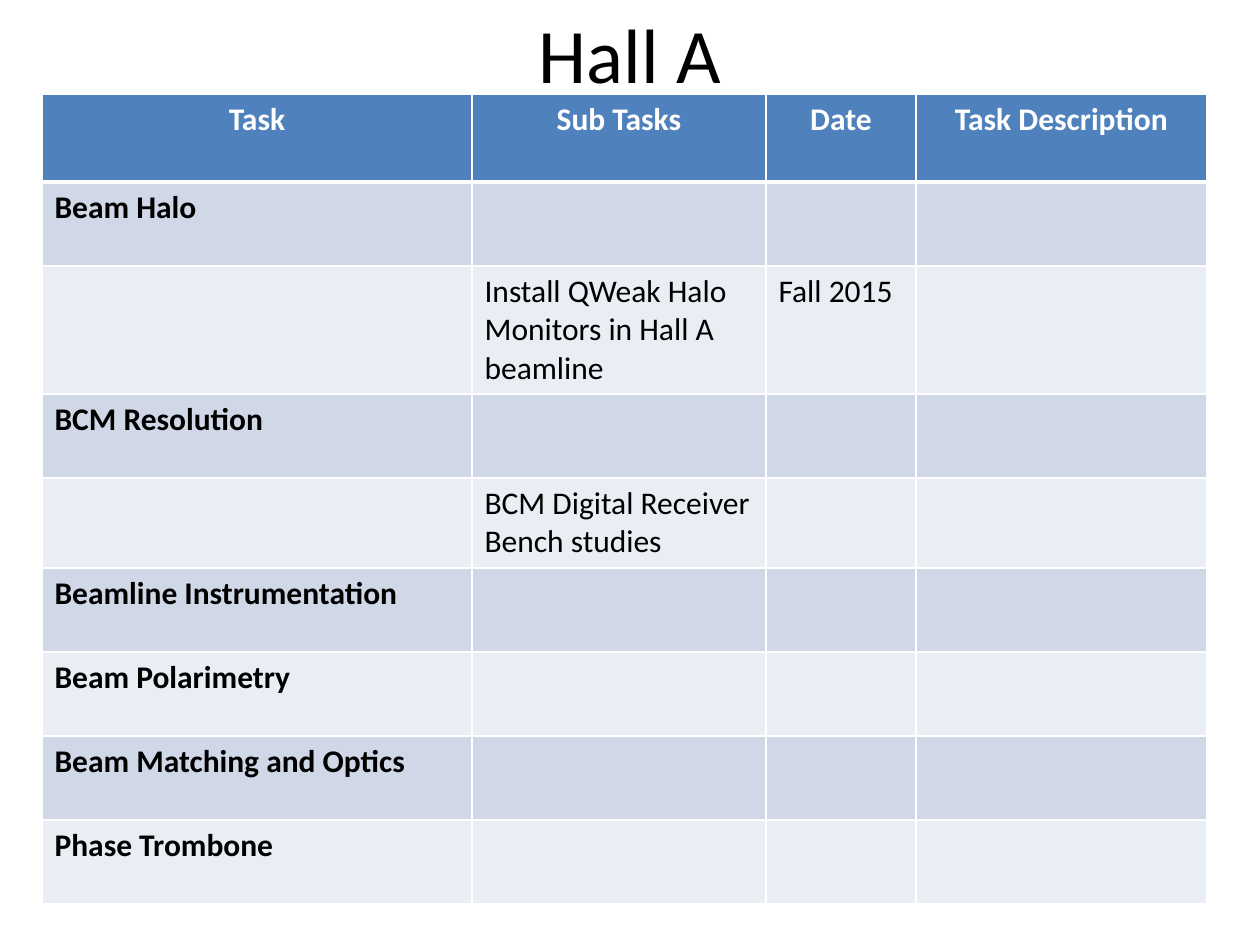
from lxml.etree import SubElement
from pptx import Presentation
from pptx.dml.color import RGBColor
from pptx.enum.text import MSO_ANCHOR, PP_ALIGN
from pptx.oxml.ns import qn
from pptx.util import Pt

TITLE = "Hall A"
HEADINGS = ["Task", "Sub Tasks", "Date", "Task Description"]
TASKS = [
    ("Beam Halo", "", ""),
    ("", "Install QWeak Halo Monitors in Hall A beamline", "Fall 2015"),
    ("BCM Resolution", "", ""),
    ("", "BCM Digital Receiver Bench studies", ""),
    ("Beamline Instrumentation", "", ""),
    ("Beam Polarimetry", "", ""),
    ("Beam Matching and Optics", "", ""),
    ("Phase Trombone", "", ""),
]
COLORS = {
    "heading": "4F81BD",
    "dark band": "D0D8E8",
    "light band": "E9EDF4",
    "white": "FFFFFF",
    "black": "000000",
}
FONT = "Calibri"
COLUMN_WIDTHS = [430, 294, 150, 291]
ROW_HEIGHTS = [88, 84, 128, 84, 90, 84, 84, 84, 84]


def px(length):
    return round(length * 914400 / 126)


def color(key):
    return RGBColor.from_string(COLORS[key])


def write(frame, text, size, ink, bold, align):
    frame.text = text
    paragraph = frame.paragraphs[0]
    paragraph.alignment = align
    font = paragraph.font
    for run in paragraph.runs:
        font = run.font
    font.name, font.size, font.bold = FONT, Pt(size), bold
    font.color.rgb = color(ink)


def add_borders(cell, row):
    widths = {"L": 1, "R": 1, "T": 3 if row == 1 else 1, "B": 3 if row == 0 else 1}
    properties = cell._tc.get_or_add_tcPr()
    for side, width in widths.items():
        line = SubElement(properties, qn(f"a:ln{side}"), w=str(Pt(width)))
        fill = SubElement(line, qn("a:solidFill"))
        SubElement(fill, qn("a:srgbClr"), val=COLORS["white"])


def add_title(slide):
    title = slide.shapes.title
    title.left, title.top, title.width, title.height = px(63), 0, px(1134), px(105)
    title.text_frame.vertical_anchor = MSO_ANCHOR.MIDDLE
    write(title.text_frame, TITLE, 44, "black", False, PP_ALIGN.CENTER)


def add_schedule(slide):
    rows = [HEADINGS] + [(*task, "") for task in TASKS]
    schedule = slide.shapes.add_table(
        len(rows), len(HEADINGS), px(42), px(94),
        px(sum(COLUMN_WIDTHS)), px(sum(ROW_HEIGHTS)),
    ).table
    for column, width in zip(schedule.columns, COLUMN_WIDTHS):
        column.width = px(width)
    for table_row, height in zip(schedule.rows, ROW_HEIGHTS):
        table_row.height = px(height)
    for r, texts in enumerate(rows):
        heading = r == 0
        band = "heading" if heading else "dark band" if r % 2 else "light band"
        for c, text in enumerate(texts):
            cell = schedule.cell(r, c)
            add_borders(cell, r)
            cell.fill.solid()
            cell.fill.fore_color.rgb = color(band)
            write(cell.text_frame, text, 18, "white" if heading else "black",
                  heading or c == 0, PP_ALIGN.CENTER if heading else PP_ALIGN.LEFT)


def main():
    deck = Presentation()
    deck.slide_width, deck.slide_height = px(1260), px(945)
    slide = deck.slides.add_slide(deck.slide_layouts[5])
    add_title(slide)
    add_schedule(slide)
    deck.save("out.pptx")


if __name__ == "__main__":
    main()
